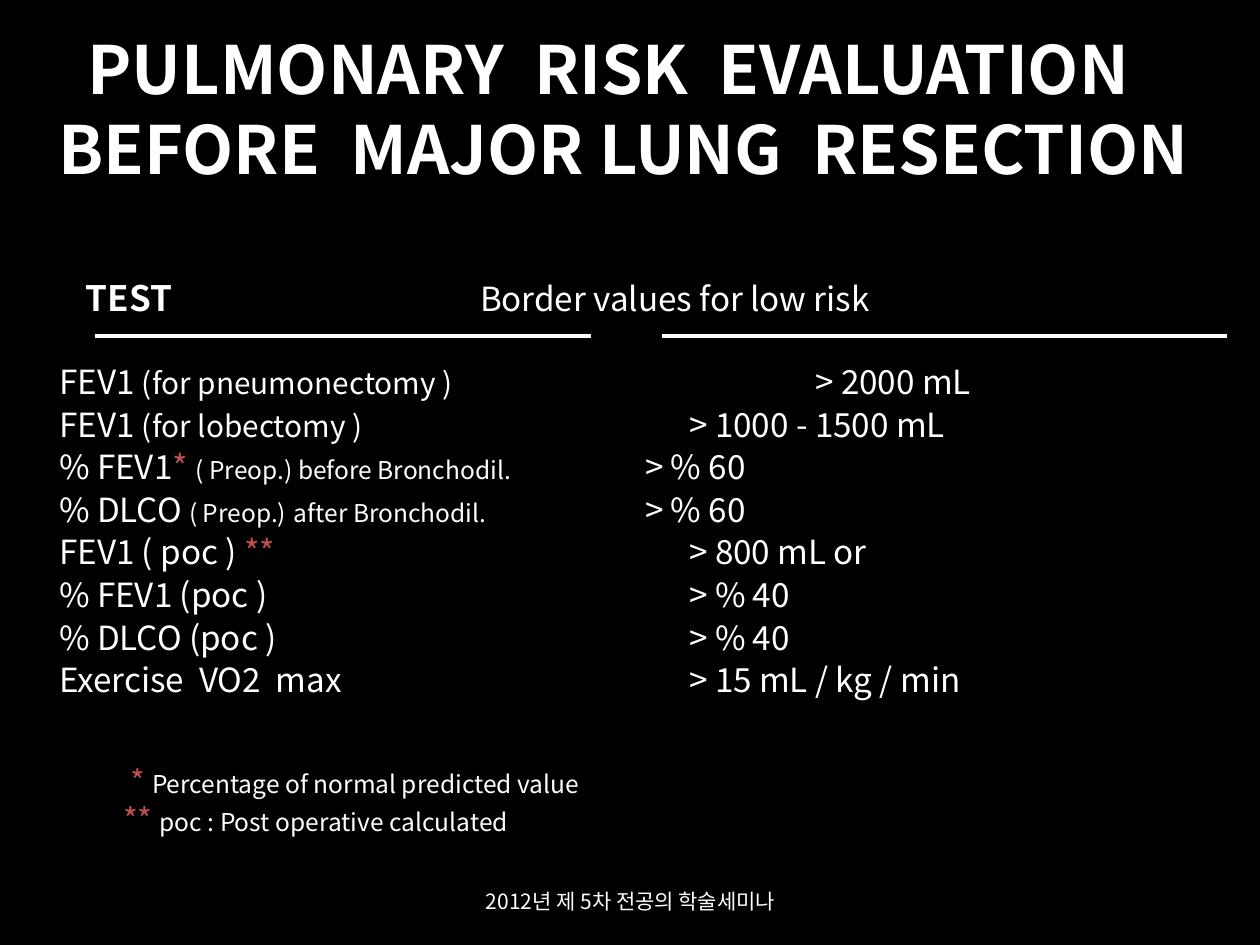
from dataclasses import dataclass

from lxml import etree
from pptx import Presentation
from pptx import util as u
from pptx.dml.color import RGBColor
from pptx.enum import shapes, text
from pptx.oxml import ns


@dataclass(frozen=True)
class Theme:
    font: str = "Noto Sans CJK KR"
    background: RGBColor = RGBColor(0, 0, 0)
    ink: RGBColor = RGBColor(0xFF, 0xFF, 0xFF)
    mark: RGBColor = RGBColor(0xC0, 0x50, 0x4D)
    title: float = 38
    heading: float = 20
    body: float = 19
    detail: float = 17
    asterisk: float = 18
    note: float = 14
    footer: float = 12


THEME = Theme()

# Each row: tab stop of the value in inches, then (text, size, colour) parts
BODY, DETAIL, NOTE = THEME.body, THEME.detail, THEME.note
INK, MARK = THEME.ink, THEME.mark
ROWS = [
    (6, [("FEV1 ", BODY, INK), ("(for pneumonectomy )", DETAIL, INK), ("\t> 2000 mL", BODY, INK)]),
    (5, [("FEV1 ", BODY, INK), ("(for lobectomy )", DETAIL, INK), ("\t> 1000 - 1500 mL", BODY, INK)]),
    (4.65, [("% FEV1", BODY, INK), ("* ", BODY, MARK),
            ("( Preop.) before Bronchodil.", NOTE, INK), ("\t> % 60", BODY, INK)]),
    (4.65, [("% DLCO ", BODY, INK), ("( Preop.)", NOTE, INK), (" ", BODY, INK),
            ("after Bronchodil.", NOTE, INK), ("\t> % 60", BODY, INK)]),
    (5, [("FEV1 ( poc ) ", BODY, INK), ("**", BODY, MARK), ("\t> 800 mL or", BODY, INK)]),
    (5, [("% FEV1 (poc )\t> % 40", BODY, INK)]),
    (5, [("% DLCO (poc )\t> % 40", BODY, INK)]),
    (5, [("Exercise  VO2  max\t> 15 mL / kg / min", BODY, INK)]),
]
NOTES = [
    (" * ", "Percentage of normal predicted value"),
    ("** ", "poc : Post operative calculated"),
]


def format_run(run, size, color=THEME.ink, bold=False):
    run.font.name = THEME.font
    run.font.size = u.Pt(size)
    run.font.bold = bold
    run.font.color.rgb = color
    east_asian = etree.SubElement(run.font._element, ns.qn("a:ea"))
    east_asian.set("typeface", THEME.font)


def add_part(paragraph, content, size, color=THEME.ink, bold=False):
    run = paragraph.add_run()
    run.text = content
    format_run(run, size, color, bold)


def add_text_box(slide, left, top, width, height, anchor=text.MSO_ANCHOR.TOP):
    shape = slide.shapes.add_textbox(*map(u.Inches, (left, top, width, height)))
    shape.text_frame.word_wrap = True
    shape.text_frame.vertical_anchor = anchor
    return shape.text_frame


def add_centered_text(slide, content, size, box, bold=False):
    frame = add_text_box(slide, *box, anchor=text.MSO_ANCHOR.MIDDLE)
    frame.text = content
    paragraph = frame.paragraphs[0]
    paragraph.alignment = text.PP_ALIGN.CENTER
    for run in paragraph.runs:
        format_run(run, size, bold=bold)


def set_tab_stops(paragraph, *stops):
    tabs = etree.SubElement(paragraph._p.get_or_add_pPr(), ns.qn("a:tabLst"))
    for stop in stops:
        etree.SubElement(tabs, ns.qn("a:tab"), pos=str(u.Inches(stop)), algn="l")


def space_row(paragraph, before=3.8):
    paragraph.line_spacing = 0.9
    paragraph.space_before = u.Pt(before)


def add_test_list(slide):
    frame = add_text_box(slide, 0, 2.18, 10, 4.58)
    frame.margin_left = u.Inches(0.47)

    # Column headings
    heading = frame.paragraphs[0]
    space_row(heading)
    set_tab_stops(heading, 0.21, 3.34)
    add_part(heading, "\tTEST", THEME.heading, bold=True)
    add_part(heading, "\tBorder values for low risk", THEME.body)

    # Tests and their limits, the first set apart from the headings
    for index, (stop, parts) in enumerate(ROWS):
        row = frame.add_paragraph()
        space_row(row, 3.8 if index else 27)
        set_tab_stops(row, stop)
        for part in parts:
            add_part(row, *part)


def add_rule(slide, start, end, y):
    rule = slide.shapes.add_connector(
        shapes.MSO_CONNECTOR.STRAIGHT, *map(u.Inches, (start, y, end, y)))
    rule.line.color.rgb = THEME.ink
    rule.line.width = u.Pt(2.25)
    etree.SubElement(rule._element.spPr, ns.qn("a:effectLst"))


def add_footnotes(slide):
    frame = add_text_box(slide, 0.88, 6, 7.12, 0.7)
    for index, (mark, note) in enumerate(NOTES):
        paragraph = frame.add_paragraph() if index else frame.paragraphs[0]
        add_part(paragraph, mark, THEME.asterisk, THEME.mark)
        add_part(paragraph, note, THEME.note)


def main():
    presentation = Presentation()
    presentation.slide_width = u.Inches(10)
    presentation.slide_height = u.Inches(7.5)
    slide = presentation.slides.add_slide(presentation.slide_layouts[6])
    slide.background.fill.solid()
    slide.background.fill.fore_color.rgb = THEME.background

    # Title
    add_centered_text(
        slide, "PULMONARY  RISK  EVALUATION  \vBEFORE  MAJOR LUNG  RESECTION",
        THEME.title, (0.16, 0.23, 9.58, 1.25), bold=True)

    # Tests with the rules under both headings
    add_test_list(slide)
    for start, end in ((0.75, 4.69), (5.25, 9.74)):
        add_rule(slide, start, end, 2.67)

    # Footnotes and footer
    add_footnotes(slide)
    add_centered_text(
        slide, "2012년 제 5차 전공의 학술세미나", THEME.footer, (3.42, 6.95, 3.17, 0.4))

    presentation.save("out.pptx")


if __name__ == "__main__":
    main()
